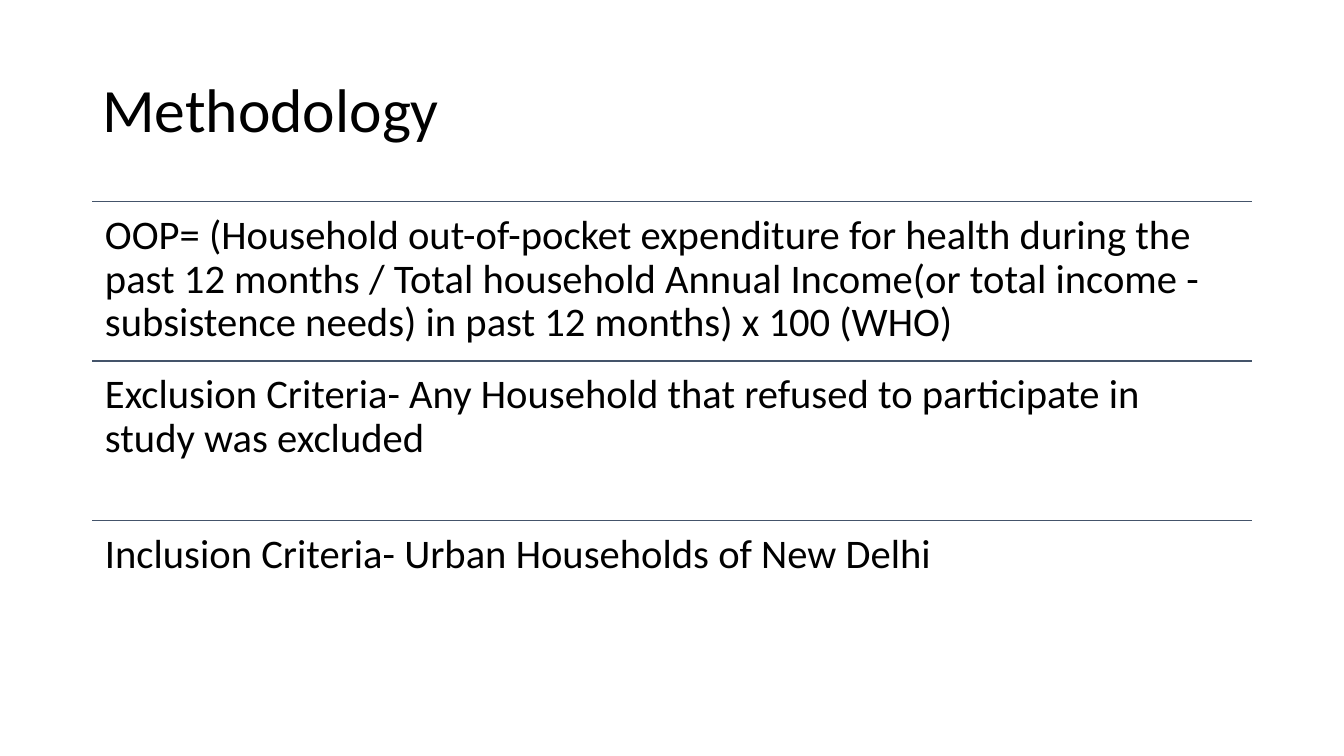
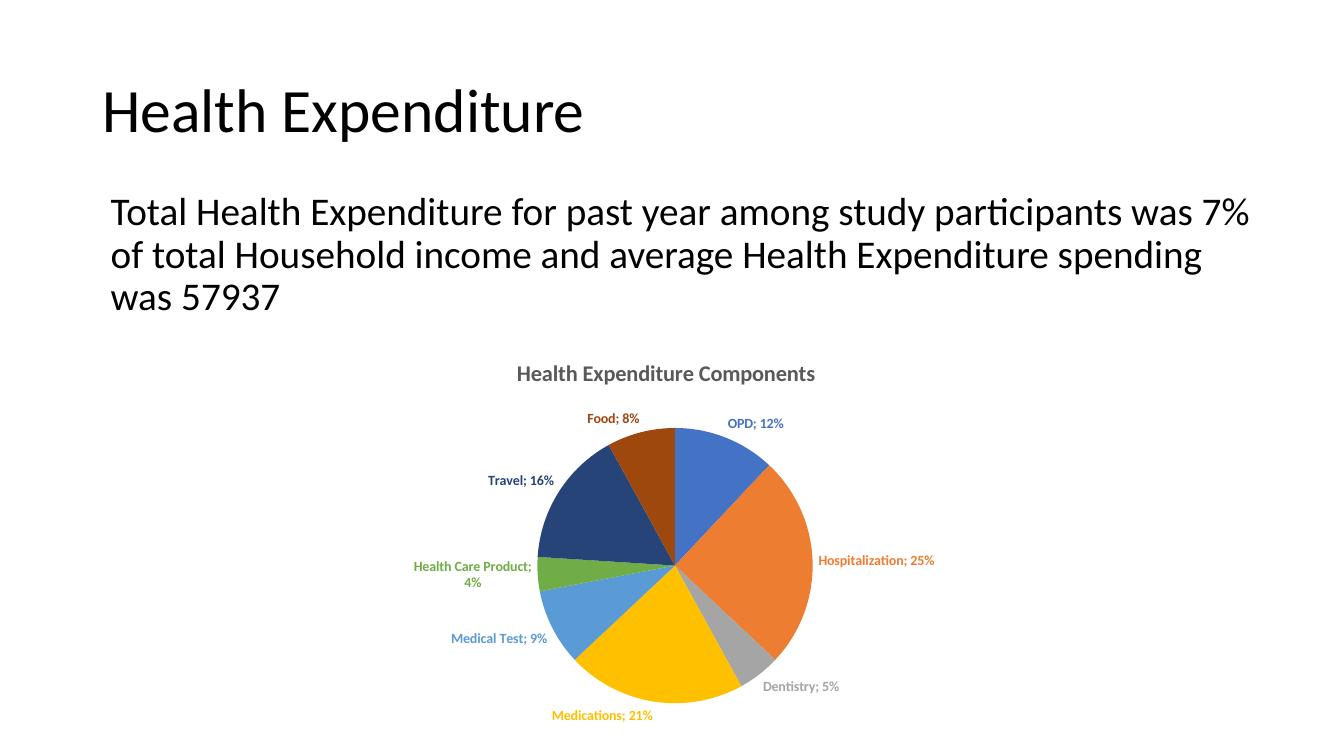
from lxml import etree
from pptx import Presentation
from pptx.chart.data import CategoryChartData
from pptx.dml.color import RGBColor
from pptx.enum.chart import XL_CHART_TYPE, XL_LABEL_POSITION
from pptx.enum.shapes import MSO_CONNECTOR
from pptx.enum.text import MSO_ANCHOR
from pptx.oxml.ns import qn
from pptx.util import Pt

PX = 9525
SLIDE_WIDTH, SLIDE_HEIGHT = 1280, 720
FONT = "Calibri"
BLACK = RGBColor(0x00, 0x00, 0x00)
CHART_TITLE_GREY = RGBColor(0x59, 0x59, 0x59)
RULE_SLATE = RGBColor(0x44, 0x54, 0x6A)

PIE = XL_CHART_TYPE.PIE
OUTSIDE_END = XL_LABEL_POSITION.OUTSIDE_END
STRAIGHT = MSO_CONNECTOR.STRAIGHT
TOP, MIDDLE = MSO_ANCHOR.TOP, MSO_ANCHOR.MIDDLE

TITLE_BOX = (88, 38, 1104, 139)
CRITERIA_BOX = (88, 192, 1104, 456)
SUMMARY_BOX = (96, 178, 1104, 146)
CHART_BOX = (352, 324, 565, 380)
PIE_LAYOUT = {"x": 0.28, "y": 0.22, "w": 0.47, "h": 0.69}

CRITERIA = [
    "OOP= (Household out-of-pocket expenditure for health during the past 12 months / "
    "Total household Annual Income(or total income - subsistence needs) in past 12 months) "
    "x 100 (WHO)",
    "Exclusion Criteria- Any Household that refused to participate in study was excluded",
    "Inclusion Criteria- Urban Households of New Delhi",
]
SUMMARY = (
    "Total Health Expenditure for past year among study participants was 7% of total "
    "Household income and average Health Expenditure spending was 57937"
)
COMPONENTS = [
    ("OPD", 0.12, RGBColor(0x44, 0x72, 0xC4)),
    ("Hospitalization", 0.25, RGBColor(0xED, 0x7D, 0x31)),
    ("Dentistry", 0.05, RGBColor(0xA5, 0xA5, 0xA5)),
    ("Medications", 0.21, RGBColor(0xFF, 0xC0, 0x00)),
    ("Medical Test", 0.09, RGBColor(0x5B, 0x9B, 0xD5)),
    ("Health Care Product", 0.04, RGBColor(0x70, 0xAD, 0x47)),
    ("Travel", 0.16, RGBColor(0x26, 0x44, 0x78)),
    ("Food", 0.08, RGBColor(0x9E, 0x48, 0x0E)),
]


def to_emu(box):
    return [length * PX for length in box]


def style_font(font, size, color, bold=False):
    font.name = FONT
    font.size = Pt(size)
    font.color.rgb = color
    font.bold = bold


def add_text(slide, box, text, size, anchor=TOP, inset=None, space_before=0):
    text_frame = slide.shapes.add_textbox(*to_emu(box)).text_frame
    text_frame.word_wrap = True
    text_frame.vertical_anchor = anchor
    if inset is not None:
        text_frame.margin_left = text_frame.margin_right = inset * PX
        text_frame.margin_top = text_frame.margin_bottom = inset * PX
    text_frame.text = text
    paragraph = text_frame.paragraphs[0]
    paragraph.line_spacing = 0.9
    paragraph.space_before = Pt(space_before)
    style_font(paragraph.runs[0].font, size, BLACK)


def add_titled_slide(presentation, title):
    slide = presentation.slides.add_slide(presentation.slide_layouts[6])
    add_text(slide, TITLE_BOX, title, 44, anchor=MIDDLE)
    return slide


def add_rule(slide, left, top, width):
    rule = slide.shapes.add_connector(STRAIGHT, *to_emu((left, top, left + width, top)))
    rule.line.color.rgb = RULE_SLATE
    rule.line.width = Pt(1)
    etree.SubElement(rule._element.spPr, qn("a:effectLst"))


def add_ruled_list(slide, box, items):
    """Stack the items in equal rows, each under a rule."""
    left, top, width, height = box
    row_height = height // len(items)
    for index, item in enumerate(items):
        row_top = top + index * row_height
        add_rule(slide, left, row_top, width)
        add_text(slide, (left, row_top, width, row_height), item, 29, inset=12)


def set_plot_layout(chart, fractions):
    """Fix the inner plot area as fractions of the chart."""
    plot_area = chart._chartSpace.find(".//" + qn("c:plotArea"))
    layout = plot_area.find(qn("c:layout"))
    if layout is None:
        layout = etree.Element(qn("c:layout"))
        plot_area.insert(0, layout)
    manual = etree.SubElement(layout, qn("c:manualLayout"))
    settings = {"layoutTarget": "inner", "xMode": "edge", "yMode": "edge", **fractions}
    for name, value in settings.items():
        etree.SubElement(manual, qn("c:" + name)).set("val", str(value))


def add_components_pie(slide, box):
    chart_data = CategoryChartData(number_format="0%")
    chart_data.categories = [name for name, _, _ in COMPONENTS]
    chart_data.add_series("Series 1", [share for _, share, _ in COMPONENTS])
    chart = slide.shapes.add_chart(PIE, *to_emu(box), chart_data).chart
    style_font(chart.font, 10, BLACK)
    chart.has_legend = False
    chart.has_title = True
    title_frame = chart.chart_title.text_frame
    title_frame.text = "Health Expenditure Components"
    style_font(title_frame.paragraphs[0].runs[0].font, 16, CHART_TITLE_GREY, bold=True)
    set_plot_layout(chart, PIE_LAYOUT)

    plot = chart.plots[0]
    plot.vary_by_categories = True
    series = plot.series[0]
    for index, (_, _, color) in enumerate(COMPONENTS):
        point = series.points[index]
        point.format.fill.solid()
        point.format.fill.fore_color.rgb = color
        style_font(point.data_label.font, 10, color, bold=True)
        point.data_label.position = OUTSIDE_END
    for flag in series._element.iter(qn("c:showCatName")):
        flag.set("val", "1")


def add_methodology_slide(presentation):
    slide = add_titled_slide(presentation, "Methodology")
    add_ruled_list(slide, CRITERIA_BOX, CRITERIA)


def add_expenditure_slide(presentation):
    slide = add_titled_slide(presentation, "Health Expenditure")
    add_text(slide, SUMMARY_BOX, SUMMARY, 28, space_before=10)
    add_components_pie(slide, CHART_BOX)


def main():
    presentation = Presentation()
    presentation.slide_width = SLIDE_WIDTH * PX
    presentation.slide_height = SLIDE_HEIGHT * PX
    add_methodology_slide(presentation)
    add_expenditure_slide(presentation)
    presentation.save("out.pptx")


if __name__ == "__main__":
    main()
